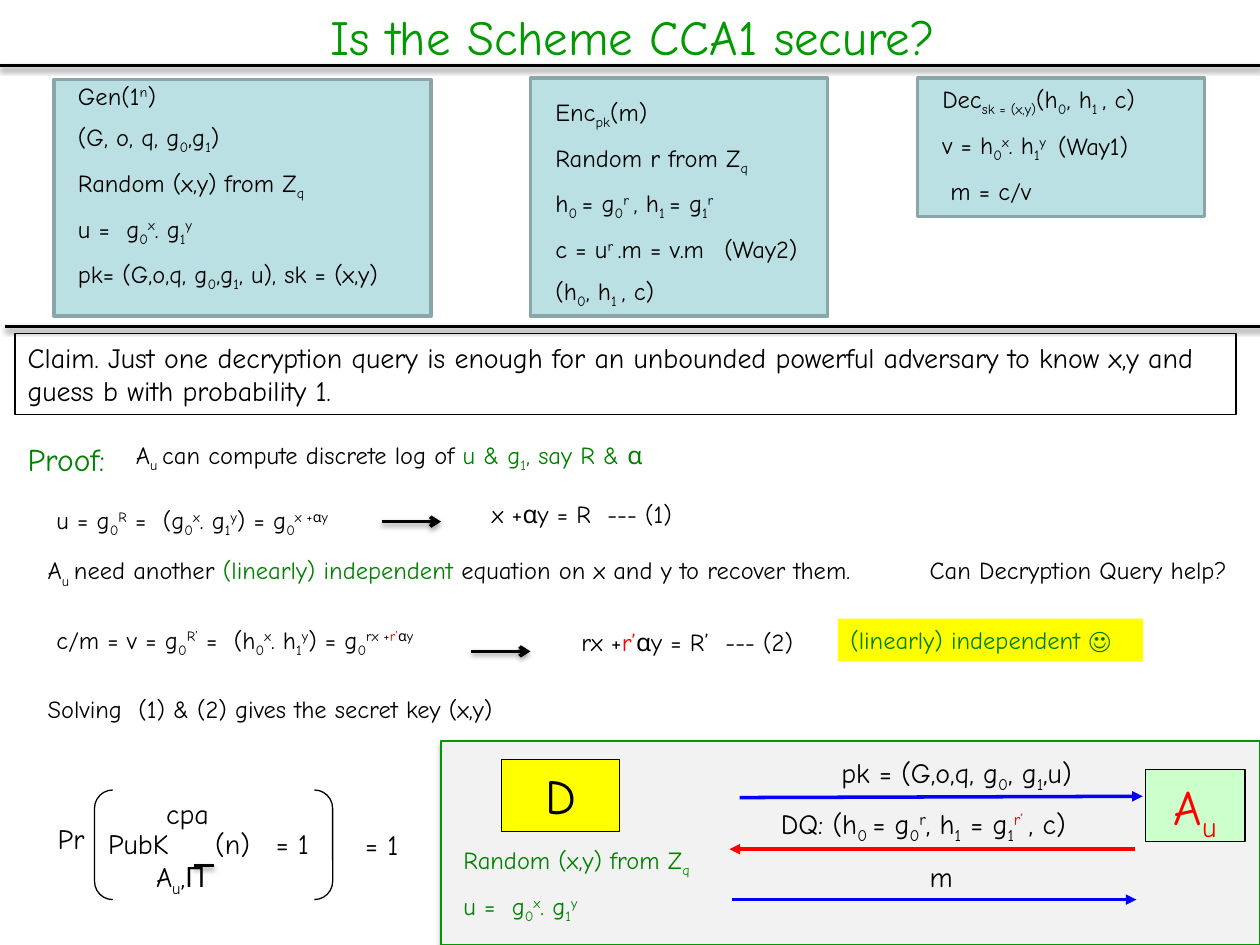
from lxml import etree
from pptx import Presentation
from pptx.dml.color import RGBColor
from pptx.enum import shapes, text
from pptx.oxml import ns
from pptx.util import Inches, Pt

BLACK = RGBColor(0, 0, 0)
RED = RGBColor(0xFF, 0, 0)
BLUE = RGBColor(0, 0, 0xFF)
GREEN = RGBColor(0, 0x80, 0)
BRIGHT_GREEN = RGBColor(0, 0x99, 0)
YELLOW = RGBColor(0xFF, 0xFF, 0)
MINT = RGBColor(0xCC, 0xFF, 0xCC)
TEAL = RGBColor(0xBB, 0xE0, 0xE3)
TEAL_EDGE = RGBColor(0x8A, 0xA6, 0xA8)
PALE_GRAY = RGBColor(0xF2, 0xF2, 0xF2)

RUN_COLORS = {"g": GREEN, "r": RED}
BASELINES = {"_": "-25000", "^": "30000"}
CENTER = text.PP_ALIGN.CENTER


class SlideBuilder:
    """Draws elements on one slide; text marks styled runs as {flags:words}, flags being _ ^ g r n."""

    def __init__(self, presentation):
        self.font = "Comic Neue"
        self.symbol_font = "Noto Sans"
        self.slide = presentation.slides.add_slide(presentation.slide_layouts[5])

    def add_runs(self, paragraph, markup, size, color):
        for index, chunk in enumerate(markup.replace("}", "{").split("{")):
            flags, words = chunk.split(":", 1) if index % 2 else ("", chunk)
            if not words:
                continue
            run = paragraph.add_run()
            run.text = words
            name = self.symbol_font if "n" in flags else self.font
            for key, value in {"name": name, "size": Pt(size), "bold": False}.items():
                setattr(run.font, key, value)
            run.font.color.rgb = color
            for flag in flags:
                if flag in RUN_COLORS:
                    run.font.color.rgb = RUN_COLORS[flag]
                if flag in BASELINES:
                    run._r.get_or_add_rPr().set("baseline", BASELINES[flag])

    def title(self, words, left, top, width, height):
        title = self.slide.shapes.title
        box = {"left": left, "top": top, "width": width, "height": height}
        for key, value in box.items():
            setattr(title, key, Inches(value))
        title.text_frame.vertical_anchor = text.MSO_ANCHOR.MIDDLE
        paragraph = title.text_frame.paragraphs[0]
        paragraph.alignment = CENTER
        self.add_runs(paragraph, words, 28, BRIGHT_GREEN)

    def paint(self, shape, fill, line, width):
        if fill is None:
            shape.fill.background()
        else:
            shape.fill.solid()
            shape.fill.fore_color.rgb = fill
        if line is None:
            shape.line.fill.background()
        else:
            shape.line.color.rgb = line
            shape.line.width = Pt(width)

    def effects(self, shape, opacity=0):
        effect_list = etree.SubElement(shape.element.spPr, ns.qn("a:effectLst"))
        if opacity:
            shadow = etree.SubElement(effect_list, ns.qn("a:outerShdw"), blurRad=str(Pt(3.1)),
                                      dist=str(Pt(1.7)), dir="5400000", rotWithShape="0")
            color = etree.SubElement(shadow, ns.qn("a:srgbClr"), val="000000")
            etree.SubElement(color, ns.qn("a:alpha"), val=str(opacity * 1000))

    def shape(self, kind, box, fill, line, width, opacity=0):
        shape = self.slide.shapes.add_shape(kind, *map(Inches, box))
        self.paint(shape, fill, line, width)
        self.effects(shape, opacity)

    def line(self, start, end, color=BLACK, head=None, opacity=0):
        connector = self.slide.shapes.add_connector(
            shapes.MSO_CONNECTOR.STRAIGHT, *map(Inches, start + end))
        connector.line.color.rgb = color
        connector.line.width = Pt(2)
        if head:
            etree.SubElement(connector.line._get_or_add_ln(), ns.qn("a:tailEnd"), type=head)
        self.effects(connector, opacity)

    def text(self, box, *paragraphs, size=14, color=BLACK, wrap=True, spaced=True,
             align=text.PP_ALIGN.LEFT, fill=None, line=None):
        shape = self.slide.shapes.add_textbox(*map(Inches, box))
        self.paint(shape, fill, line, 0.75)
        frame = shape.text_frame
        frame.word_wrap = wrap
        frame.auto_size = text.MSO_AUTO_SIZE.SHAPE_TO_FIT_TEXT
        for index, markup in enumerate(paragraphs):
            paragraph = frame.add_paragraph() if index else frame.paragraphs[0]
            paragraph.alignment = align
            if spaced:
                before = etree.SubElement(paragraph._p.get_or_add_pPr(), ns.qn("a:spcBef"))
                etree.SubElement(before, ns.qn("a:spcPct"), val="50000")
            self.add_runs(paragraph, markup, size, color)


def draw_algorithms(builder):
    random_key = "Random (x,y) from Z{_:q}"
    public_value = "u =  g{_:0}{^:x}. g{_:1}{^:y}"
    cards = [
        ((4.21, 0.62, 2.36, 1.89), (4.31, 0.72, 2.27, 1.75),
         ["Enc{_:pk}(m)", "Random r from Z{_:q}",
          "h{_:0 }= g{_:0}{^:r }, h{_:1 }= g{_:1}{^:r}",
          "c = u{^:r }.m = v.m", "(h{_:0}, h{_:1 }, c)"]),
        ((7.28, 0.62, 2.28, 1.1), (7.38, 0.62, 2.19, 1.04),
         ["Dec{_:sk = (x,y)}(h{_:0}, h{_:1 }, c)",
          "v = h{_:0}{^:x}. h{_:1}{^:y}", " m = c/v"]),
        ((0.43, 0.63, 2.99, 1.88), (0.52, 0.59, 2.99, 1.93),
         ["Gen(1{^:n})", "(G, o, q, g{_:0},g{_:1})", random_key, public_value,
          "pk= (G,o,q, g{_:0},g{_:1}, u), sk = (x,y)"]),
    ]
    for card, box, paragraphs in cards:
        builder.shape(shapes.MSO_SHAPE.RECTANGLE, card, TEAL, TEAL_EDGE, 2)
        builder.text(box, *paragraphs)
    builder.text((5.65, 1.81, 0.9, 0.34), "(Way2)")
    builder.text((8.3, 0.99, 0.9, 0.34), "(Way1)")
    for left, top in [(0, 0.52), (0.04, 2.59)]:
        builder.line((left, top), (left + 10, top), opacity=38)
    builder.text((3.58, 6.66, 2.2, 0.69), random_key, public_value, color=GREEN)


def draw_proof(builder):
    builder.text((0.12, 2.65, 9.69, 0.64),
                 "Claim. Just one decryption query is enough for an unbounded powerful "
                 "adversary to know x,y and guess b with probability 1.", size=16, line=BLACK)
    builder.text((0.12, 3.44, 0.92, 0.4), "Proof:", size=18, color=GREEN, wrap=False)
    spaced_lines = [
        (0.98, 3.44, 4.53, "A{_:u }can compute discrete log of {g:u & g}{g_:1}{g:, say R & }{gn:α}"),
        (0.28, 4.36, 7.1, "A{_:u }need another {g:(linearly) independent} "
                          "equation on x and y to recover them."),
        (7.28, 4.36, 2.77, "Can Decryption Query help?"),
    ]
    plain_lines = [
        (0.35, 3.96, 2.57, "u = g{_:0}{^:R} =  (g{_:0}{^:x}. g{_:1}{^:y}) = g{_:0}{^:x +}{^n:α}{^:y}"),
        (3.74, 3.91, 1.76, " x +{n:α}y = R  --- (1)"),
        (0.35, 4.91, 3.33, "c/m = v = g{_:0}{^:R’} =  (h{_:0}{^:x}. h{_:1}{^:y}) = "
                           "g{_:0}{^:rx +}{^r:r’}{^n:α}{^:y}"),
        (4.45, 4.93, 2.09, " rx +{r:r’}{n:α}y = R’  --- (2)"),
        (0.28, 5.46, 4.11, "Solving  (1) & (2) gives the secret key (x,y)"),
    ]
    for lines, spaced in [(spaced_lines, True), (plain_lines, False)]:
        for left, top, width, markup in lines:
            builder.text((left, top, width, 0.34), markup, wrap=False, spaced=spaced)
    builder.text((6.65, 4.91, 2.42, 0.34), "(linearly) independent ☺", color=GREEN,
                 wrap=False, spaced=False, fill=YELLOW)
    for left, top in [(3.03, 4.14), (3.74, 5.17)]:
        builder.line((left, top), (left + 0.47, top), head="arrow", opacity=38)


def draw_game(builder):
    builder.text((9.09, 6.11, 0.79, 0.57), "A{_:u}", size=28, color=RED,
                 align=CENTER, fill=MINT, line=BLACK)
    builder.text((3.98, 6.03, 0.94, 0.57), "D", size=28,
                 align=CENTER, fill=YELLOW, line=BLACK)
    messages = [
        (6.58, 5.95, 2.23, "pk = (G,o,q, g{_:0}, g{_:1},u)"),
        (6.1, 6.35, 2.83, "DQ: (h{_:0 }= g{_:0}{^:r}, h{_:1} = g{_:1}{^r:r’ }, c)"),
        (7.28, 6.77, 0.64, "m"),
    ]
    probability = [
        (0.36, 6.47, 0.62, "Pr"),
        (0.76, 6.51, 0.8, "PubK"),
        (1.61, 6.51, 0.6, "(n)"),
        (1.14, 6.77, 0.94, "A{_:u},Π"),
        (1.22, 6.27, 1.1, "cpa"),
        (2.09, 6.51, 0.62, "= 1"),
        (2.8, 6.52, 0.62, "= 1"),
    ]
    for left, top, width, markup in messages + probability:
        builder.text((left, top, width, 0.37), markup, size=16)
    builder.line((5.87, 6.33), (9.07, 6.32), BLUE, "triangle")
    builder.line((9.01, 6.74), (5.79, 6.74), RED, "triangle")
    builder.line((5.81, 7.14), (9.02, 7.14), BLUE, "triangle")
    builder.shape(shapes.MSO_SHAPE.DOUBLE_BRACKET, (0.75, 6.27, 1.89, 0.87), None, BLACK, 0.75)
    builder.line((1.54, 6.87), (1.7, 6.87), opacity=38)


def main():
    presentation = Presentation()
    presentation.slide_width = Inches(10)
    presentation.slide_height = Inches(7.5)
    builder = SlideBuilder(presentation)
    builder.title("Is the Scheme CCA1 secure?", -0.12, -0.03, 10.28, 0.63)
    builder.shape(shapes.MSO_SHAPE.RECTANGLE, (3.5, 5.88, 6.5, 1.62),
                  PALE_GRAY, BRIGHT_GREEN, 0.75, opacity=35)
    draw_algorithms(builder)
    draw_proof(builder)
    draw_game(builder)
    presentation.save("out.pptx")


if __name__ == "__main__":
    main()
